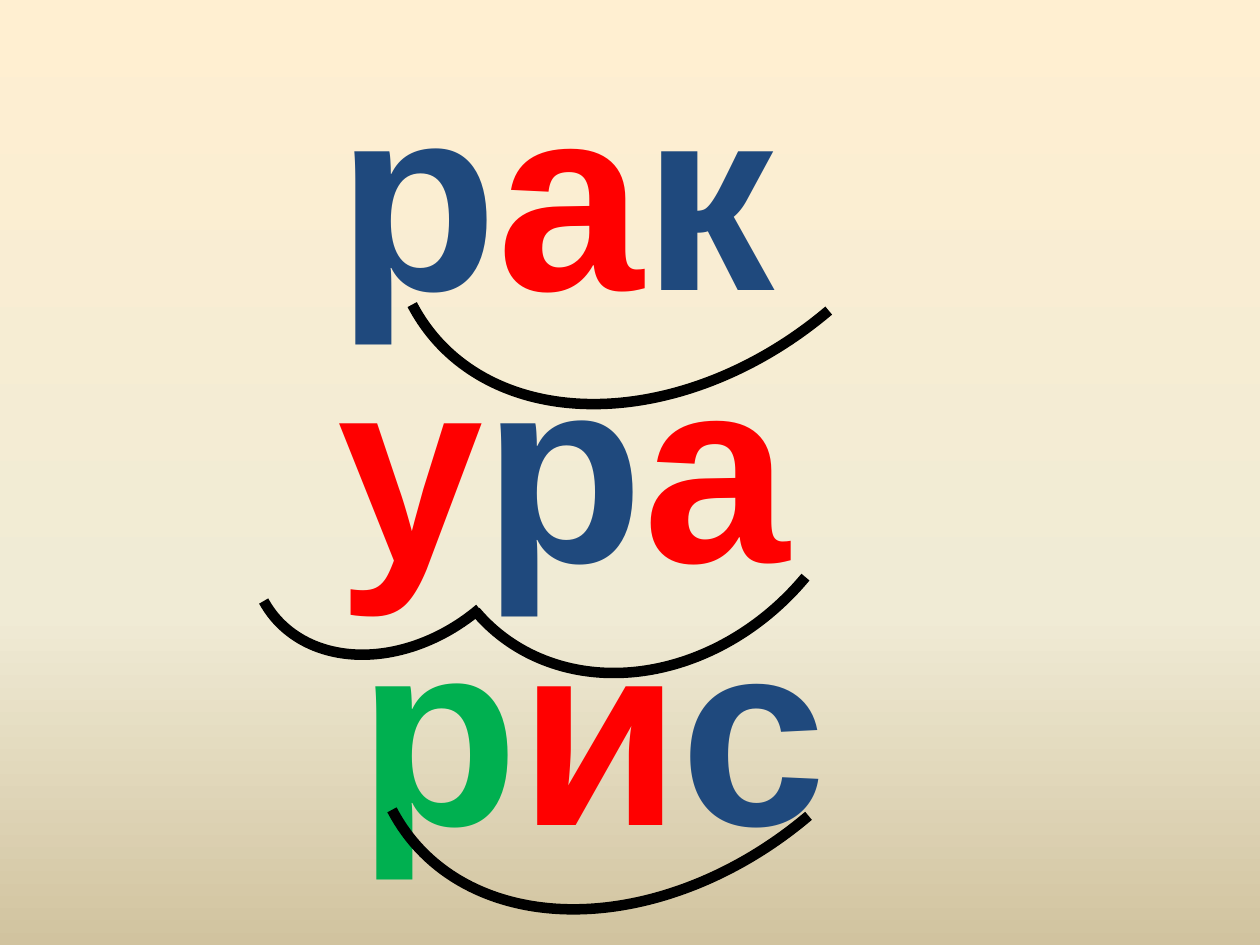
from copy import deepcopy

from pptx import Presentation
from pptx.dml.color import RGBColor
from pptx.enum.shapes import MSO_SHAPE
from pptx.enum.text import MSO_AUTO_SIZE
from pptx.oxml.ns import qn
from pptx.util import Inches, Pt

ARC = MSO_SHAPE.ARC
GROW = MSO_AUTO_SIZE.SHAPE_TO_FIT_TEXT
BLANK_LAYOUT = 6

COLORS = {
    "vowel": "FF0000",
    "hard": "1F497D",
    "soft": "00B050",
    "arc": "000000",
    "top": "FFEFD1",
    "middle": "F0EBD5",
    "bottom": "D1C39F",
}
ARC_ANGLES = (161.729, 4.148)

WORDS = [
    ((2.58, 0.17, 3.71, 2.63), "рак", ("hard", "vowel", "hard")),
    ((2.58, 2.33, 4.38, 2.62), "ура", ("vowel", "hard", "vowel")),
    ((2.75, 4.42, 4.53, 2.63), "рис", ("soft", "vowel", "hard")),
]
SYLLABLES = [
    ((1.88, 3.08, 2.56, 1.99), 140),
    ((2.85, -0.81, 5.04, 3.72), 140),
    ((3.26, 1.96, 3.8, 3.2), 130.1),
    ((2.69, 3.2, 5.04, 3.72), 140),
]


def color(name):
    """Return the named colour."""
    return RGBColor.from_string(COLORS[name])


def paint_background(slide):
    """Fill the slide with a vertical three-colour gradient."""
    fill = slide.background.fill
    fill.gradient()
    fill.gradient_angle = 270
    stop_list = next(slide.element.iter(qn("a:gsLst")))
    stop_list.append(deepcopy(stop_list[-1]))
    stops = zip(fill.gradient_stops, (0, 0.65, 1), ("top", "middle", "bottom"))
    for stop, position, name in stops:
        stop.position = position
        stop.color.rgb = color(name)


def add_word(slide, box, word, sounds):
    """Write a word in the box, each letter coloured by its sound."""
    text_frame = slide.shapes.add_textbox(*map(Inches, box)).text_frame
    text_frame.word_wrap = False
    text_frame.auto_size = GROW
    paragraph = text_frame.paragraphs[0]
    for letter, sound in zip(word, sounds):
        run = paragraph.add_run()
        run.text = letter
        run.font.name = "Arial"
        run.font.size = Pt(150)
        run.font.bold = True
        run.font.color.rgb = color(sound)


def add_syllable_arc(slide, box, rotation):
    """Draw the arc that marks one syllable."""
    shape = slide.shapes.add_shape(ARC, *map(Inches, box))
    shape.rotation = rotation
    for index, angle in enumerate(ARC_ANGLES):
        shape.adjustments[index] = angle
    shape.shadow.inherit = False
    shape.fill.background()
    shape.line.color.rgb = color("arc")
    shape.line.width = Pt(6)


def main():
    """Build the slide of words divided into syllables."""
    presentation = Presentation()
    presentation.slide_width = Inches(10)
    presentation.slide_height = Inches(7.5)
    slide = presentation.slides.add_slide(presentation.slide_layouts[BLANK_LAYOUT])
    paint_background(slide)
    for box, word, sounds in WORDS:
        add_word(slide, box, word, sounds)
    for box, rotation in SYLLABLES:
        add_syllable_arc(slide, box, rotation)
    presentation.save("out.pptx")


if __name__ == "__main__":
    main()
